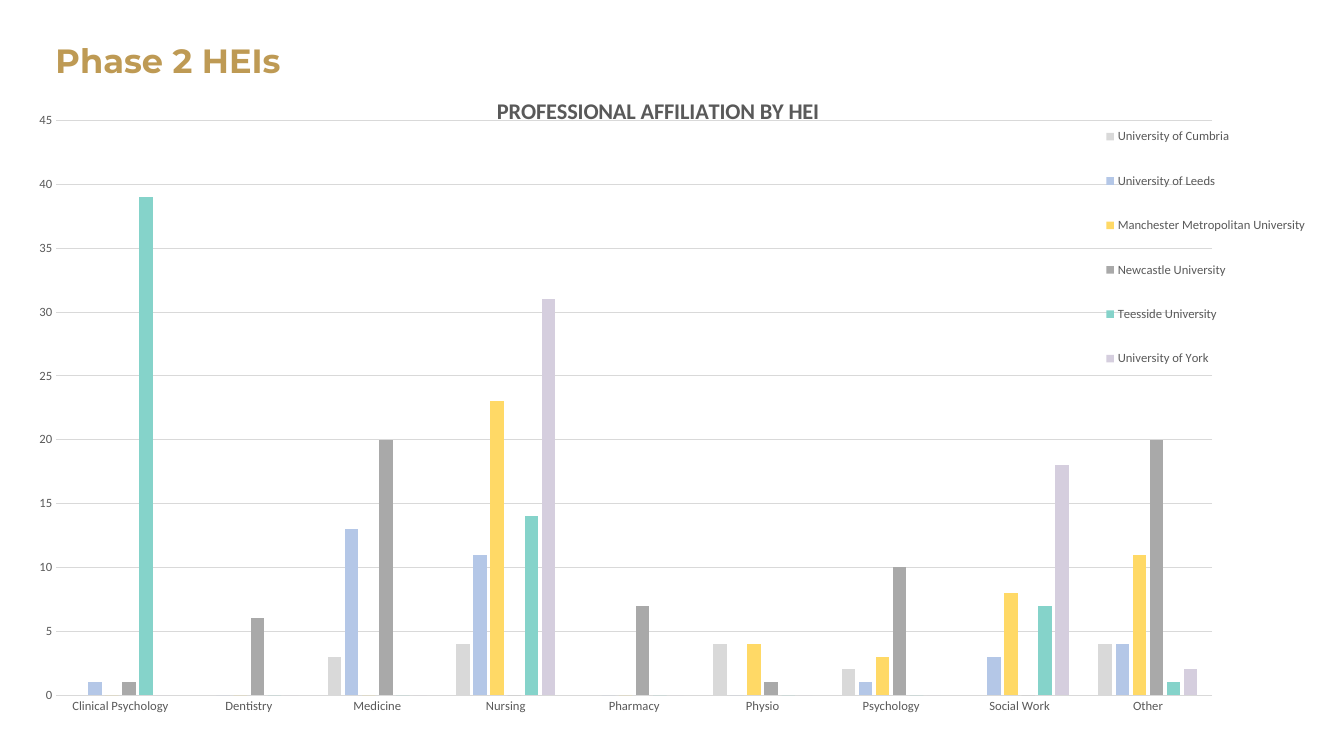
from lxml import etree
from pptx import Presentation
from pptx.chart.data import CategoryChartData
from pptx.dml.color import RGBColor
from pptx.enum.chart import XL_CHART_TYPE, XL_LEGEND_POSITION, XL_TICK_MARK
from pptx.enum.text import MSO_ANCHOR, PP_ALIGN
from pptx.oxml.ns import qn
from pptx.util import Inches, Pt

CLUSTERED = XL_CHART_TYPE.COLUMN_CLUSTERED
LEGEND_RIGHT = XL_LEGEND_POSITION.RIGHT
NO_TICK = XL_TICK_MARK.NONE
TOP = MSO_ANCHOR.TOP
LEFT = PP_ALIGN.LEFT

GOLD = RGBColor(0xBE, 0x9A, 0x54)
TEXT_GREY = RGBColor(0x59, 0x59, 0x59)
LINE_GREY = RGBColor(0xD9, 0xD9, 0xD9)
BLACK = RGBColor(0, 0, 0)

PROFESSIONS = ["Clinical Psychology", "Dentistry", "Medicine", "Nursing", "Pharmacy",
               "Physio", "Psychology", "Social Work", "Other"]
UNIVERSITIES = [
    ("University of Cumbria", (0, 0, 3, 4, 0, 4, 2, 0, 4), LINE_GREY),
    ("University of Leeds", (1, 0, 13, 11, 0, 0, 1, 3, 4), RGBColor(0xB4, 0xC7, 0xE7)),
    ("Manchester Metropolitan University", (0, 0, 0, 23, 0, 4, 3, 8, 11),
     RGBColor(0xFF, 0xD9, 0x66)),
    ("Newcastle University", (1, 6, 20, 0, 7, 1, 10, 0, 20), RGBColor(0xA9, 0xA9, 0xA9)),
    ("Teesside University", (39, 0, 0, 14, 0, 0, 0, 7, 1), RGBColor(0x85, 0xD3, 0xCA)),
    ("University of York", (0, 0, 0, 31, 0, 0, 0, 18, 2), RGBColor(0xD5, 0xCE, 0xDE)),
]


def style_font(font, size, color, name="Calibri", bold=False):
    font.size = Pt(size)
    font.color.rgb = color
    font.name = name
    font.bold = bold


def style_line(line):
    line.color.rgb = LINE_GREY
    line.width = Pt(0.75)


def place_part(part, index, **shares):
    for old in part.findall(qn("c:layout")):
        part.remove(old)
    layout = etree.Element(qn("c:layout"))
    part.insert(index, layout)
    manual = etree.SubElement(layout, qn("c:manualLayout"))
    if "w" in shares:
        etree.SubElement(manual, qn("c:layoutTarget")).set("val", "inner")
    if part.tag != qn("c:plotArea"):
        for target in manual.findall(qn("c:layoutTarget")):
            manual.remove(target)
    for side in ("x", "y"):
        etree.SubElement(manual, qn(f"c:{side}Mode")).set("val", "edge")
    for key, share in shares.items():
        etree.SubElement(manual, qn(f"c:{key}")).set("val", str(share))


def add_title(s, text):
    title = s.shapes.title
    title.left, title.top = Inches(0.45), Inches(0.35)
    title.width, title.height = Inches(2.72), Inches(0.5)
    tf = title.text_frame
    tf.text = text
    tf.word_wrap = False
    tf.vertical_anchor = TOP
    p = tf.paragraphs[0]
    p.alignment = LEFT
    style_font(p.runs[0].font, 24, GOLD, "Montserrat", True)


def add_column_chart(s):
    data = CategoryChartData()
    data.categories = PROFESSIONS
    for name, counts, _ in UNIVERSITIES:
        data.add_series(name, counts)
    chart = s.shapes.add_chart(CLUSTERED, Inches(0.22), Inches(0.65),
                               Inches(12.97), Inches(6.5), data).chart
    style_font(chart.font, 10, BLACK)
    plot = chart.plots[0]
    plot.gap_width = 219
    plot.overlap = -27
    plot.vary_by_categories = False
    for series, (_, _, color) in zip(plot.series, UNIVERSITIES):
        series.format.fill.solid()
        series.format.fill.fore_color.rgb = color
    return chart


def style_axes(chart):
    for axis in (chart.category_axis, chart.value_axis):
        axis.major_tick_mark = axis.minor_tick_mark = NO_TICK
        style_font(axis.tick_labels.font, 9, TEXT_GREY)
    style_line(chart.category_axis.format.line)
    value_axis = chart.value_axis
    value_axis.minimum_scale, value_axis.maximum_scale = 0, 45
    value_axis.major_unit = 5
    value_axis.format.line.fill.background()
    style_line(value_axis.major_gridlines.format.line)


def add_chart_title(chart, text):
    chart.has_title = True
    tf = chart.chart_title.text_frame
    tf.text = text
    style_font(tf.paragraphs[0].runs[0].font, 16, TEXT_GREY, bold=True)


def add_legend(chart):
    chart.has_legend = True
    chart.legend.position = LEGEND_RIGHT
    chart.legend.include_in_layout = False
    style_font(chart.legend.font, 9, TEXT_GREY)


def place_parts(chart):
    root = chart.element
    place_part(root.find(".//" + qn("c:plotArea")), 0, x=0.026, y=0.084, w=0.884, h=0.877)
    place_part(root.find(".//" + qn("c:legend")), 1, x=0.815, y=0.052, w=0.18, h=0.452)
    place_part(root.find(qn("c:chart")).find(qn("c:title")), 1, x=0.36, y=0.04)


def main():
    prs = Presentation()
    prs.slide_width, prs.slide_height = Inches(13.33), Inches(7.5)
    s = prs.slides.add_slide(prs.slide_layouts.get_by_name("Title Only"))
    chart = add_column_chart(s)
    style_axes(chart)
    add_chart_title(chart, "PROFESSIONAL AFFILIATION BY HEI")
    add_legend(chart)
    place_parts(chart)
    add_title(s, "Phase 2 HEIs")
    prs.save("out.pptx")


if __name__ == "__main__":
    main()
